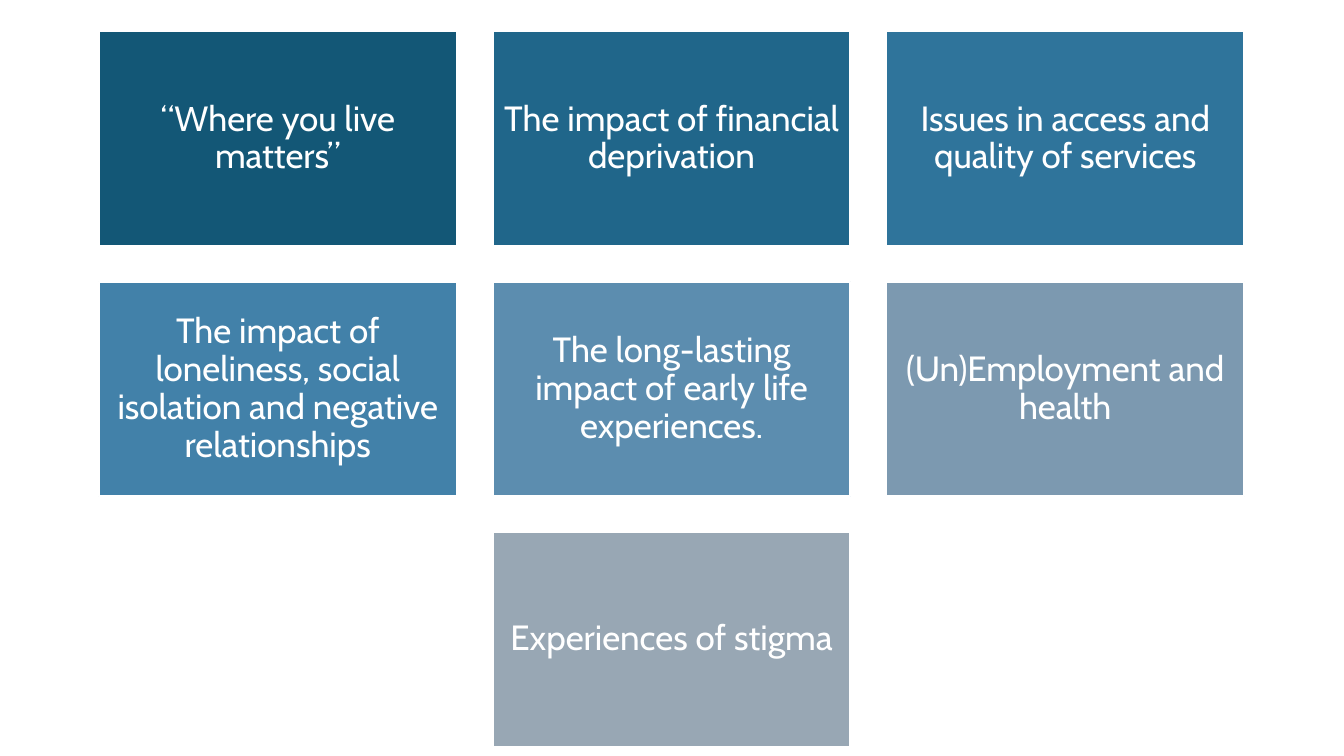
from pptx import Presentation
from pptx.dml.color import RGBColor
from pptx.enum.shapes import MSO_SHAPE
from pptx.enum.text import MSO_ANCHOR, PP_ALIGN
from pptx.util import Inches, Pt

WHITE = RGBColor(0xFF, 0xFF, 0xFF)
DEEP_TEAL = RGBColor(0x13, 0x57, 0x76)
TEAL = RGBColor(0x20, 0x66, 0x8A)
BLUE = RGBColor(0x2F, 0x74, 0x9B)
MID_BLUE = RGBColor(0x42, 0x81, 0xA9)
SOFT_BLUE = RGBColor(0x5C, 0x8D, 0xAF)
GREY_BLUE = RGBColor(0x7C, 0x99, 0xB0)
PALE_GREY = RGBColor(0x98, 0xA7, 0xB4)

LEFT, TOP = 0.98, 0.31
WIDTH = 3.55
HEIGHT = WIDTH * 0.6
GAP = WIDTH / 10
COLUMNS = 3

themes = [
    ("“Where you live matters”", DEEP_TEAL),
    ("The impact of financial deprivation", TEAL),
    ("Issues in access and quality of services", BLUE),
    ("The impact of loneliness, social isolation and negative relationships", MID_BLUE),
    ("The long-lasting impact of early life experiences.", SOFT_BLUE),
    ("(Un)Employment and health", GREY_BLUE),
    ("Experiences of stigma", PALE_GREY),
]

deck = Presentation()
deck.slide_width = Inches(13.33)
deck.slide_height = Inches(7.5)
page = deck.slides.add_slide(deck.slide_layouts[6])

for index, (theme, color) in enumerate(themes):
    row, column = divmod(index, COLUMNS)
    # A row that is not full is centred
    row_length = min(COLUMNS, len(themes) - row * COLUMNS)
    column += (COLUMNS - row_length) / 2

    box = page.shapes.add_shape(
        MSO_SHAPE.RECTANGLE,
        Inches(LEFT + column * (WIDTH + GAP)),
        Inches(TOP + row * (HEIGHT + GAP)),
        Inches(WIDTH),
        Inches(HEIGHT),
    )
    box.shadow.inherit = False
    box.fill.solid()
    box.fill.fore_color.rgb = color
    box.line.color.rgb = WHITE
    box.line.width = Pt(1.5)

    frame = box.text_frame
    frame.word_wrap = True
    frame.vertical_anchor = MSO_ANCHOR.MIDDLE
    frame.margin_left = frame.margin_right = Inches(0.1)
    frame.margin_top = frame.margin_bottom = Inches(0.1)

    para = frame.paragraphs[0]
    para.alignment = PP_ALIGN.CENTER
    para.line_spacing = 0.9
    span = para.add_run()
    span.text = theme
    span.font.name = "Cabin"
    span.font.size = Pt(25)
    span.font.color.rgb = WHITE

deck.save("out.pptx")
